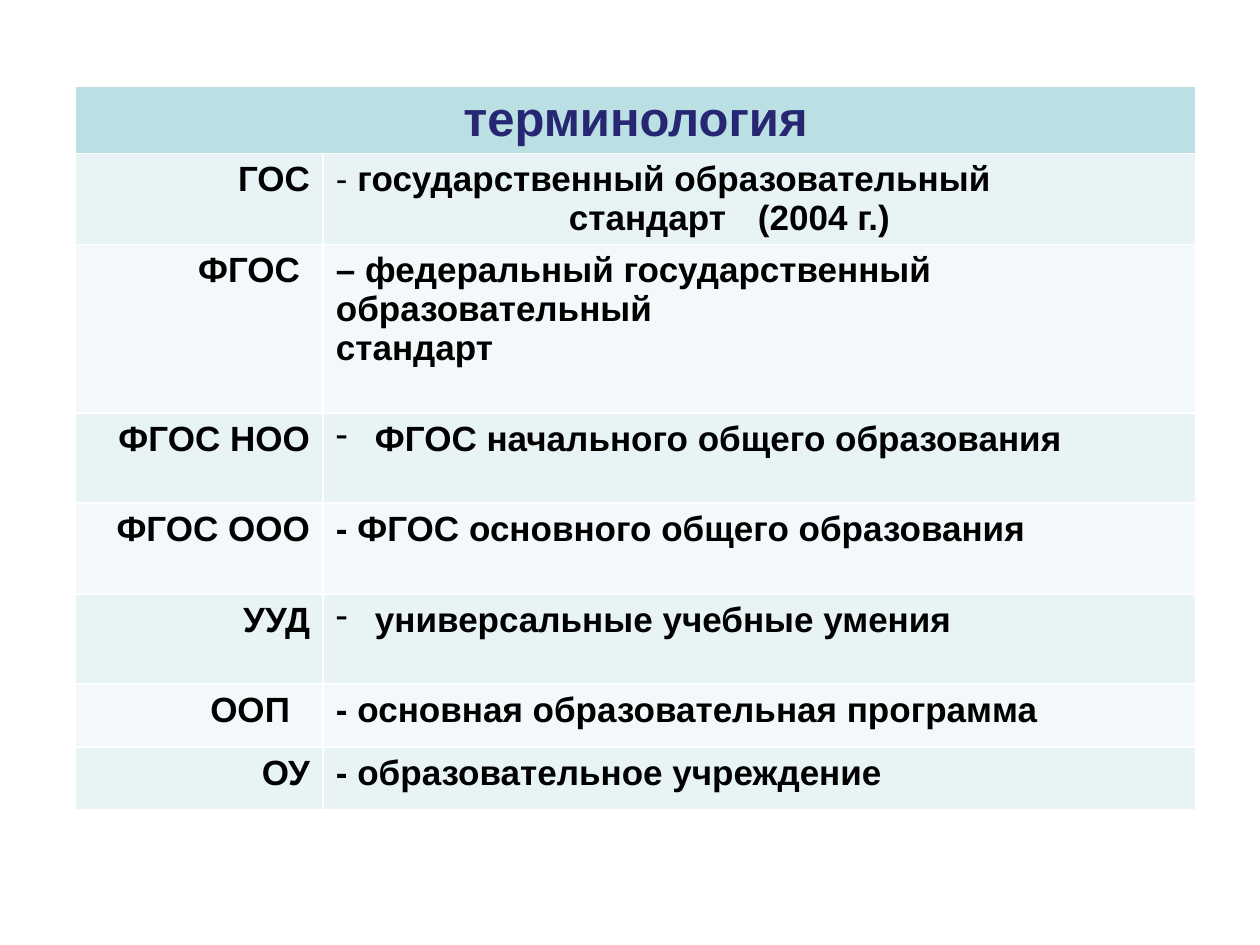
from lxml import etree
from pptx import Presentation
from pptx import util as u
from pptx.dml.color import RGBColor
from pptx.enum import text
from pptx.oxml import ns

PX = u.Inches(1) // 126
COLORS = {
    "header": "BBE0E3",
    "odd": "E7F3F4",
    "even": "F3F9FA",
    "title": "262673",
    "ink": "000000",
}
COLUMNS = (248, 873)
HEADER_HEIGHT = 67
MARGIN = 13
BULLET_INDENT = 39
TERMS = [
    ("ГОС", 0, 91, ["- государственный образовательный", "стандарт\t(2004 г.)"]),
    ("ФГОС", 10, 169, ["– федеральный государственный образовательный", "стандарт"]),
    ("ФГОС НОО", 0, 90, ["ФГОС начального общего образования"]),
    ("ФГОС ООО", 0, 91, ["- ФГОС основного общего образования"]),
    ("УУД", 0, 90, ["универсальные учебные умения"]),
    ("ООП", 20, 63, ["- основная образовательная программа"]),
    ("ОУ", 0, 63, ["- образовательное учреждение"]),
]
BULLETED = {"ФГОС НОО", "УУД"}


def px(length):
    """Turn whole px into EMU."""
    return u.Emu(length * PX)


def format_run(run, size=20, color="ink", bold=True):
    """Set the font of one run."""
    run.font.name = "Arial"
    run.font.size = u.Pt(size)
    run.font.bold = bold
    run.font.color.rgb = RGBColor.from_string(COLORS[color])


def fill_cell(cell, lines, fill, align=text.PP_ALIGN.LEFT, **font):
    """Write lines into a cell as formatted paragraphs on a solid fill."""
    cell.fill.solid()
    cell.fill.fore_color.rgb = RGBColor.from_string(COLORS[fill])
    cell.margin_left = cell.margin_right = px(MARGIN)
    cell.text_frame.text = "\n".join(lines)
    for paragraph in cell.text_frame.paragraphs:
        paragraph.alignment = align
        for run in paragraph.runs:
            format_run(run, **font)


def add_dash_bullet(paragraph):
    """Give a paragraph a hanging dash bullet."""
    properties = paragraph._p.get_or_add_pPr()
    properties.set("marL", str(px(BULLET_INDENT)))
    properties.set("indent", str(-px(BULLET_INDENT)))
    etree.SubElement(properties, ns.qn("a:buFontTx"))
    etree.SubElement(properties, ns.qn("a:buChar")).set("char", "-")


def indent_year_line(paragraph, indent, tab):
    """Indent the line with the year and set the tab stop before the year."""
    properties = paragraph._p.get_or_add_pPr()
    properties.set("marL", str(px(indent)))
    properties.set("indent", "0")
    tabs = etree.SubElement(properties, ns.qn("a:tabLst"))
    stop = etree.SubElement(tabs, ns.qn("a:tab"))
    stop.set("pos", str(px(tab)))
    stop.set("algn", "l")


def lighten_dash(paragraph):
    """Split the leading dash into a run of regular weight."""
    dash, rest = paragraph.text.split(" ", 1)
    paragraph.text = dash + " "
    format_run(paragraph.runs[0], bold=False)
    run = paragraph.add_run()
    run.text = rest
    format_run(run)


def add_terms_table(slide, left, top):
    """Add the table of terms with its merged header."""
    heights = [HEADER_HEIGHT] + [height for _, _, height, _ in TERMS]
    table = slide.shapes.add_table(
        len(heights), len(COLUMNS), px(left), px(top), px(sum(COLUMNS)), px(sum(heights))
    ).table
    for column, width in zip(table.columns, COLUMNS):
        column.width = px(width)
    for row, height in zip(table.rows, heights):
        row.height = px(height)

    header = table.cell(0, 0)
    header.merge(table.cell(0, 1))
    fill_cell(header, ["терминология"], "header", text.PP_ALIGN.CENTER, size=28, color="title")

    for index, (term, inset, _, lines) in enumerate(TERMS, start=1):
        fill = "odd" if index % 2 else "even"
        term_cell, meaning_cell = table.cell(index, 0), table.cell(index, 1)
        fill_cell(term_cell, [term], fill, text.PP_ALIGN.RIGHT)
        term_cell.margin_right = px(MARGIN + inset)
        fill_cell(meaning_cell, lines, fill)
        if term in BULLETED:
            add_dash_bullet(meaning_cell.text_frame.paragraphs[0])

    first, second = table.cell(1, 1).text_frame.paragraphs
    lighten_dash(first)
    indent_year_line(second, 233, 420)


def main():
    """Build the slide and save it."""
    presentation = Presentation()
    presentation.slide_width, presentation.slide_height = px(1260), px(945)
    slide = presentation.slides.add_slide(presentation.slide_layouts[6])
    add_terms_table(slide, 75, 86)
    presentation.save("out.pptx")


if __name__ == "__main__":
    main()
